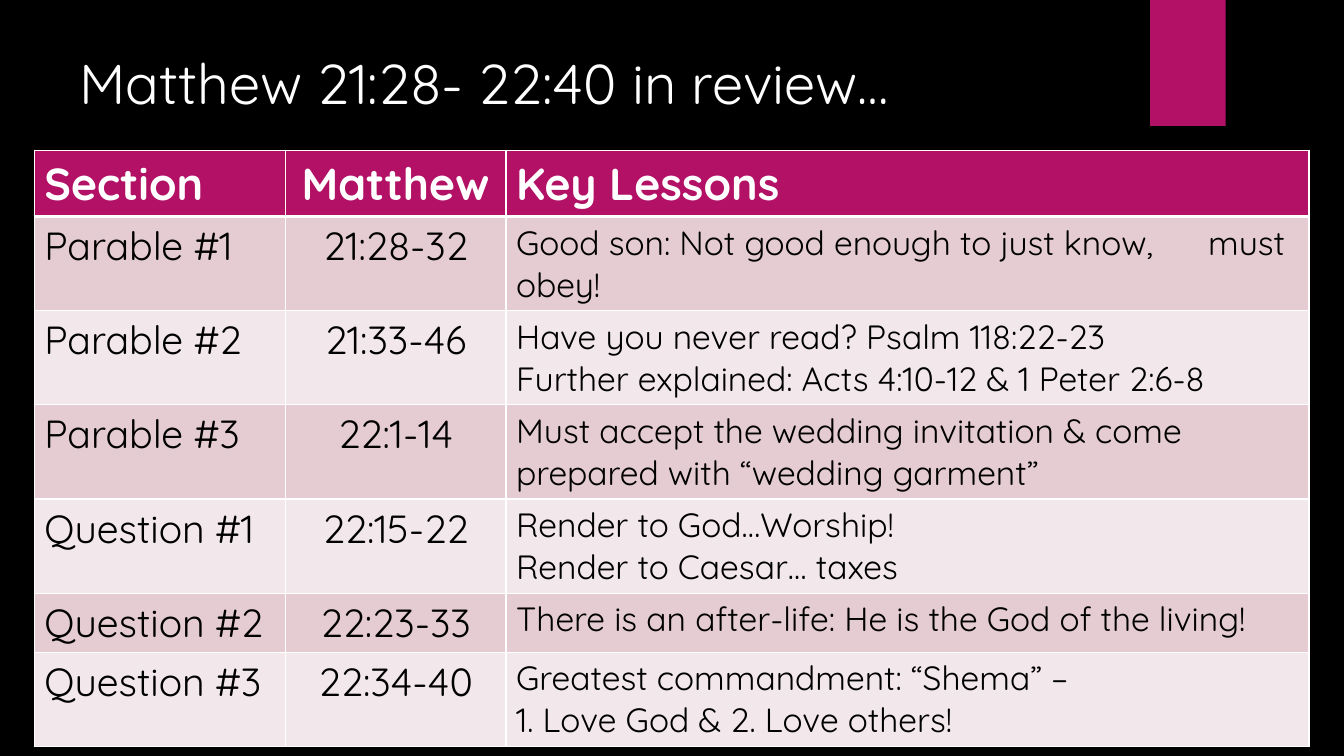
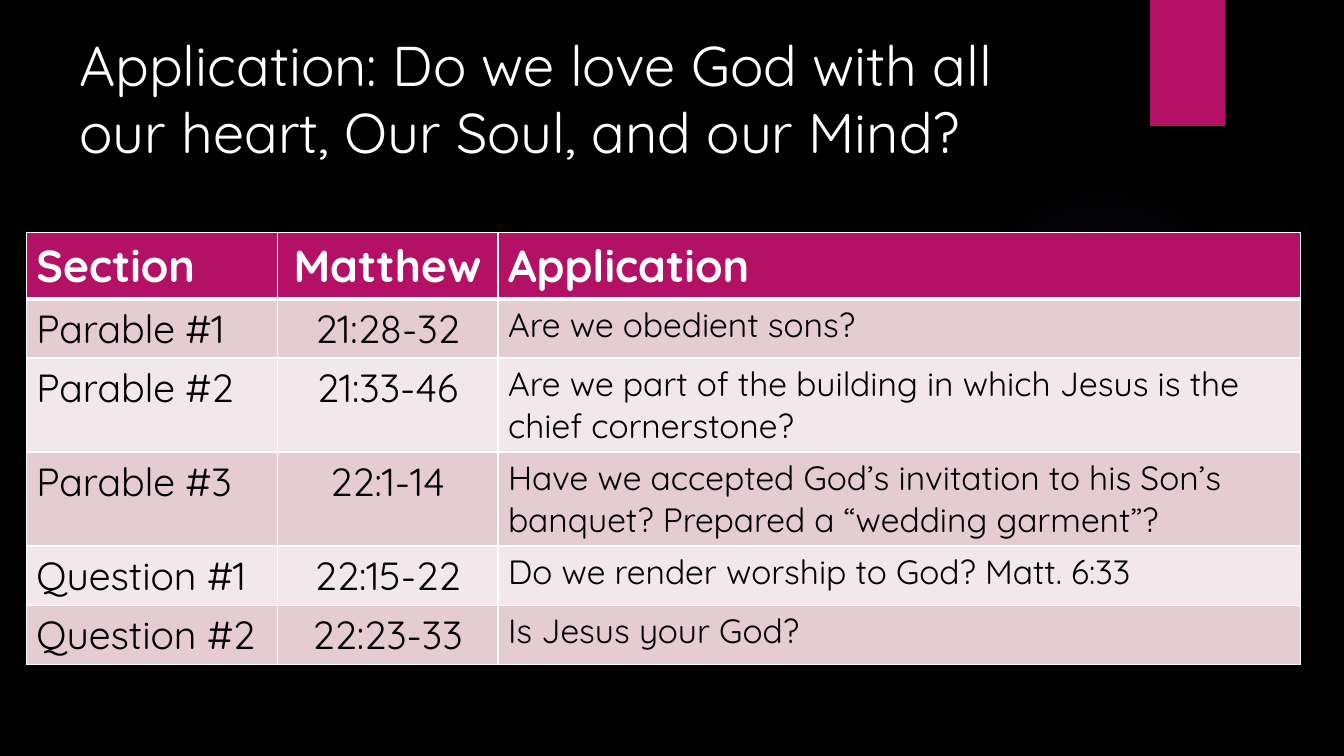
from dataclasses import dataclass

import pptx
import pptx.dml.color
import pptx.enum.shapes
import pptx.enum.text
import pptx.oxml
import pptx.oxml.ns
import pptx.util

Pt = pptx.util.Pt
ALIGN = pptx.enum.text.PP_ALIGN
SHAPE = pptx.enum.shapes.MSO_SHAPE

FONT = "Quicksand"
COLORS = {
    "background": "000000",
    "accent": "B31166",
    "glow": "9B6BF2",
    "odd_row": "E5CCD3",
    "even_row": "F2E7EA",
    "light": "FFFFFF",
    "dark": "000000",
}

# Table measures, in points
COLUMN_WIDTHS = (179.3, 157.7, 573.5)
HEADER_SIZE, LABEL_SIZE, LESSON_SIZE = 32, 28, 24
LINE_HEIGHT, CELL_MARGINS = 1.25, 7.2
THIN, THICK = 1, 3
LESSON_TAB = 494.3

SECTIONS = (
    ("Parable #1", "21:28-32"),
    ("Parable #2", "21:33-46"),
    ("Parable #3", "22:1-14"),
    ("Question #1", "22:15-22"),
    ("Question #2", "22:23-33"),
    ("Question #3", "22:34-40"),
)


@dataclass(frozen=True)
class Lesson:
    text: str
    lines: int = 2


@dataclass(frozen=True)
class Review:
    title: str
    title_box: tuple[float, float, float, float]
    table_left: float
    table_top: float
    heading: str
    lessons: tuple[Lesson, ...]


@dataclass(frozen=True)
class CellStyle:
    size: int
    fill: str
    color: str = "dark"
    bold: bool = False
    centered: bool = False
    top: int = THIN
    bottom: int = THIN


REVIEWS = (
    Review(
        "Matthew 21:28- 22:40 in review…",
        (49.7, 31, 664.6, 55.4), 24.5, 107.3, "Key Lessons",
        (
            Lesson("Good son: Not good enough to just know,\tmust obey!"),
            Lesson("Have you never read? Psalm 118:22-23\n"
                   "Further explained: Acts 4:10-12 & 1 Peter 2:6-8"),
            Lesson("Must accept the wedding invitation & come prepared with “wedding garment”"),
            Lesson("Render to God…Worship!\nRender to Caesar… taxes"),
            Lesson("There is an after-life: He is the God of the living!", 1),
            Lesson("Greatest commandment: “Shema” –\n1. Love God & 2. Love others!"),
        ),
    ),
    Review(
        "Application: Do we love God with all\nour heart, Our Soul, and our Mind?",
        (49.7, 18, 744.5, 104.4), 18.7, 166.3, "Application",
        (
            Lesson("Are we obedient sons?", 1),
            Lesson("Are we part of the building in which Jesus is the chief cornerstone?"),
            Lesson("Have we accepted God’s invitation to his Son’s banquet? "
                   "Prepared a “wedding garment”?"),
            Lesson("Do we render worship to God? Matt. 6:33", 1),
            Lesson("Is Jesus your God?", 1),
        ),
    ),
)


def rgb(name: str) -> pptx.dml.color.RGBColor:
    return pptx.dml.color.RGBColor.from_string(COLORS[name])


def xml(tag: str, attributes: str, content: str):
    namespace = pptx.oxml.ns.nsdecls("a")
    return pptx.oxml.parse_xml(f"<a:{tag} {namespace} {attributes}>{content}</a:{tag}>")


def write(frame, text: str, size: int, color: str, bold: bool = False,
          centered: bool = False) -> None:
    frame.word_wrap = True
    frame.text = text
    for paragraph in frame.paragraphs:
        if "\t" in paragraph.text:
            stop = f'<a:tab pos="{Pt(LESSON_TAB)}" algn="l"/>'
            paragraph._p.get_or_add_pPr().append(xml("tabLst", "", stop))
        paragraph.alignment = ALIGN.CENTER if centered else ALIGN.LEFT
        paragraph.font.name = FONT
        paragraph.font.size = Pt(size)
        paragraph.font.bold = bold
        paragraph.font.color.rgb = rgb(color)


def draw_backdrop(page) -> None:
    page.background.fill.solid()
    page.background.fill.fore_color.rgb = rgb("background")

    # Faint glow
    glow = page.shapes.add_shape(SHAPE.OVAL, Pt(677.5), Pt(131.8), Pt(221.8), Pt(221.8))
    stops = "".join(
        f'<a:gs pos="{position * 1000}"><a:srgbClr val="{COLORS["glow"]}">'
        f'<a:alpha val="{alpha * 1000}"/></a:srgbClr></a:gs>'
        for position, alpha in ((0, 7), (36, 6), (69, 0), (100, 0))
    )
    center = '<a:fillToRect l="50000" t="50000" r="50000" b="50000"/>'
    gradient = xml("gradFill", "",
                   f'<a:gsLst>{stops}</a:gsLst><a:path path="circle">{center}</a:path>')
    properties = glow._element.spPr
    properties.insert(2, gradient)

    # Accent band
    band = page.shapes.add_shape(SHAPE.RECTANGLE, Pt(821.5), Pt(0), Pt(54), Pt(90))
    band.fill.solid()
    band.fill.fore_color.rgb = rgb("accent")

    for shape in (glow, band):
        shape.line.fill.background()
        shape.shadow.inherit = False


def fill_cell(cell, text: str, style: CellStyle) -> None:
    write(cell.text_frame, text, style.size, style.color, style.bold, style.centered)
    cell.fill.solid()
    cell.fill.fore_color.rgb = rgb(style.fill)
    borders = (("lnL", THIN), ("lnR", THIN), ("lnT", style.top), ("lnB", style.bottom))
    line = f'<a:solidFill><a:srgbClr val="{COLORS["light"]}"/></a:solidFill>'
    for index, (side, width) in enumerate(borders):
        cell._tc.get_or_add_tcPr().insert(index, xml(side, f'w="{Pt(width)}"', line))


def row_height(size: int, lines: int = 1) -> float:
    return size * LINE_HEIGHT * lines + CELL_MARGINS


def draw_table(page, review: Review) -> None:
    heights = [row_height(HEADER_SIZE)] + [
        max(row_height(LABEL_SIZE), row_height(LESSON_SIZE, lesson.lines))
        for lesson in review.lessons
    ]
    table = page.shapes.add_table(
        len(heights), len(COLUMN_WIDTHS), Pt(review.table_left), Pt(review.table_top),
        Pt(sum(COLUMN_WIDTHS)), Pt(sum(heights)),
    ).table
    table.horz_banding = False
    for column, width in zip(table.columns, COLUMN_WIDTHS):
        column.width = Pt(width)
    for row, height in zip(table.rows, heights):
        row.height = Pt(height)

    # Header row
    for index, text in enumerate(("Section", "Matthew", review.heading)):
        style = CellStyle(HEADER_SIZE, "accent", "light", True, index == 1, bottom=THICK)
        fill_cell(table.cell(0, index), text, style)

    # Body rows
    for number, (section, lesson) in enumerate(zip(SECTIONS, review.lessons), start=1):
        fill = "odd_row" if number % 2 else "even_row"
        top = THICK if number == 1 else THIN
        for index, text in enumerate((*section, lesson.text)):
            size = LESSON_SIZE if index == 2 else LABEL_SIZE
            style = CellStyle(size, fill, centered=index == 1, top=top)
            fill_cell(table.cell(number, index), text, style)


def draw_title(page, review: Review) -> None:
    box = page.shapes.add_textbox(*map(Pt, review.title_box))
    write(box.text_frame, review.title, 40, "light")


def main() -> None:
    deck = pptx.Presentation()
    deck.slide_width, deck.slide_height = Pt(960), Pt(540)
    for review in REVIEWS:
        page = deck.slides.add_slide(deck.slide_layouts[6])
        draw_backdrop(page)
        draw_table(page, review)
        draw_title(page, review)
    deck.save("out.pptx")


if __name__ == "__main__":
    main()
